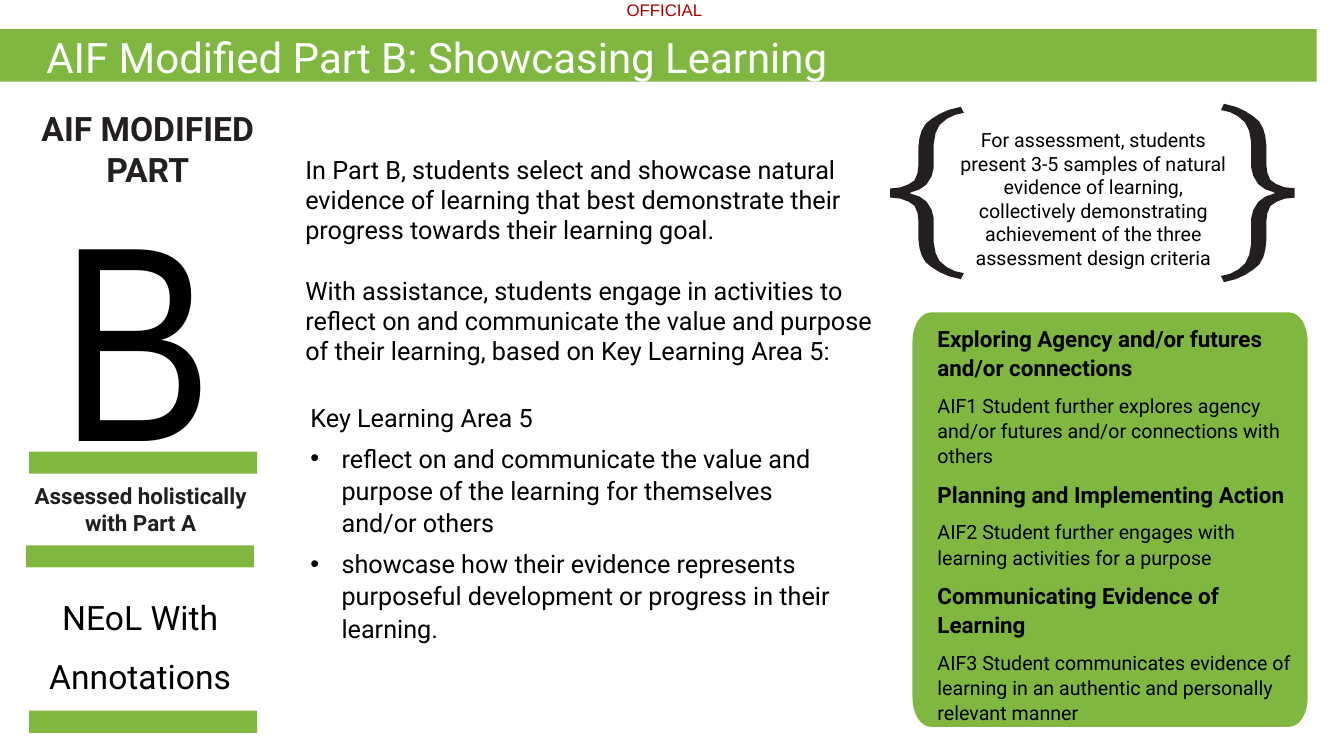
import math
from dataclasses import dataclass

from lxml import etree
from pptx import Presentation
from pptx.dml.color import RGBColor
from pptx.enum.shapes import MSO_SHAPE
from pptx.enum.text import MSO_ANCHOR, PP_ALIGN
from pptx.oxml.ns import qn
from pptx.util import Inches, Pt

RECT = MSO_SHAPE.RECTANGLE
TOP = MSO_ANCHOR.TOP
LEFT, CENTER = PP_ALIGN.LEFT, PP_ALIGN.CENTER


@dataclass(frozen=True)
class Theme:
    font: str = "Roboto"
    label_font: str = "Arial"
    letter_font: str = "Arial Narrow"
    green: str = "80B740"
    ink: str = "231F20"
    black: str = "000000"
    white: str = "FFFFFF"
    red: str = "A80000"
    letter: int = 199
    title: int = 30
    heading: int = 24
    body: int = 18
    subhead: int = 16
    small: int = 14
    label: int = 12


T = Theme()

# Upper half of a left brace, in inches, within a box of BRACE_W by BRACE_H
BRACE_W, BRACE_H = 0.74, 1.71
BRACE_OUTER = [(0.70, 0), (0.58, 0.03), (0.49, 0.07), (0.41, 0.12), (0.35, 0.17),
               (0.31, 0.24), (0.29, 0.31), (0.28, 0.39), (0.28, 0.58), (0.27, 0.66),
               (0.24, 0.73), (0.18, 0.77), (0.10, 0.80), (0, 0.81)]
BRACE_INNER = [(0.20, 0.85), (0.29, 0.82), (0.36, 0.77), (0.41, 0.69), (0.43, 0.61),
               (0.43, 0.37), (0.45, 0.26), (0.49, 0.18), (0.56, 0.12), (0.64, 0.08),
               (0.73, 0.06)]


def paint(sp, color):
    sp.shadow.inherit = False
    sp.fill.solid()
    sp.fill.fore_color.rgb = RGBColor.from_string(color)
    sp.line.fill.background()


def add_bar(s, x, y, w, h):
    sp = s.shapes.add_shape(RECT, Inches(x), Inches(y), Inches(w), Inches(h))
    paint(sp, T.green)
    return sp


def add_outline(s, points, color):
    start, *rest = [(Inches(px), Inches(py)) for px, py in points]
    builder = s.shapes.build_freeform(*start)
    builder.add_line_segments(rest, close=True)
    paint(builder.convert_to_shape(), color)


def set_margins(tf, left=0.1, top=0.05, right=0.1, bottom=0.05):
    tf.margin_left, tf.margin_top = Inches(left), Inches(top)
    tf.margin_right, tf.margin_bottom = Inches(right), Inches(bottom)


def add_box(s, x, y, w, h, **margins):
    tf = s.shapes.add_textbox(Inches(x), Inches(y), Inches(w), Inches(h)).text_frame
    tf.word_wrap = True
    set_margins(tf, **margins)
    return tf


def write(tf, text, size, color=T.black, font=T.font, bold=False, align=LEFT,
          spacing=None, before=0, after=0):
    p = tf.paragraphs[0]
    if p.runs:
        p = tf.add_paragraph()
    p.text = text
    p.font.size, p.font.name, p.font.bold = Pt(size), font, bold
    p.font.color.rgb = RGBColor.from_string(color)
    p.alignment, p.line_spacing = align, spacing
    p.space_before, p.space_after = Pt(before), Pt(after)
    return p


def add_bullet(p, indent):
    pPr = p._p.get_or_add_pPr()
    pPr.set("marL", str(Inches(indent)))
    pPr.set("indent", str(-Inches(indent)))
    for bullet in (etree.Element(qn("a:buFont"), typeface=T.label_font),
                   etree.Element(qn("a:buChar"), char="•")):
        pPr.insert_element_before(bullet, "a:tabLst", "a:defRPr", "a:extLst")


def add_header(s, x, y, w, h):
    tf = add_box(s, 6.19, 0, 0.8, 0.2, left=0, top=0, right=0, bottom=0)
    write(tf, "OFFICIAL", T.label, T.red, T.label_font, align=CENTER)
    tf = add_bar(s, x, y, w, h).text_frame
    tf.vertical_anchor = TOP
    set_margins(tf, left=0.46, top=0.02, right=0, bottom=0)
    write(tf, "AIF Modified Part B: Showcasing Learning", T.title, T.white, before=1.4)


def add_part_column(s, x, y, w):
    tight = dict(left=0.01, top=0.01, right=0, bottom=0)
    tf = add_box(s, x + 0.08, y, 2.24, 0.83, **tight)
    for line in ("AIF MODIFIED", "PART"):
        write(tf, line, T.heading, T.ink, bold=True, align=CENTER, before=0.7)

    tf = add_box(s, x - 0.04, y + 0.51, 2.28, 3.45)
    write(tf, "B", T.letter, font=T.letter_font, align=CENTER)

    # Green rules between the blocks
    for dx, dy in ((0.03, 3.42), (0, 4.35), (0.03, 5.99)):
        add_bar(s, x + dx, y + dy, w, 0.22)

    tf = add_box(s, x - 0.03, y + 3.71, 2.32, 0.55, **tight)
    write(tf, "Assessed holistically with Part A", T.subhead, T.ink, bold=True,
          align=CENTER, before=0.7)

    tf = add_box(s, x, y + 4.62, w, 1.22)
    for line in ("NEoL With", "Annotations"):
        write(tf, line, T.heading, align=CENTER, spacing=Pt(42.5))


def add_description(s, x, y, w):
    tf = add_box(s, x, y, w, 2.22)
    write(tf, "In Part B, students select and showcase natural evidence of learning "
          "that best demonstrate their progress towards their learning goal.", T.body)
    write(tf, "With assistance, students engage in activities to reflect on and "
          "communicate the value and purpose of their learning, based on Key "
          "Learning Area 5:", T.body, before=21.5)

    tf = add_box(s, x + 0.05, y + 2.44, 5.63, 2.52, right=0.2)
    write(tf, "Key Learning Area 5", T.body, spacing=1.07, before=6)
    for text in (
        "reflect on and communicate the value and purpose of the learning for "
        "themselves and/or others",
        "showcase how their evidence represents purposeful development or progress "
        "in their learning.",
    ):
        add_bullet(write(tf, text, T.body, spacing=1.07, before=6), 0.31)


def add_brace(s, x, y, h, opens_left=True):
    def lower(points):
        return [(px, BRACE_H - py) for px, py in reversed(points)]

    outline = BRACE_OUTER + lower(BRACE_OUTER) + lower(BRACE_INNER) + BRACE_INNER
    add_outline(s, [(x + (px if opens_left else BRACE_W - px), y + py * h / BRACE_H)
                    for px, py in outline], T.ink)


def add_assessment_note(s, x, y, w):
    add_brace(s, x, y + 0.03, BRACE_H)
    add_brace(s, x + w - BRACE_W, y, 1.77, opens_left=False)
    tf = add_box(s, x + 0.53, y + 0.19, 2.97, 1.51)
    write(tf, "For assessment, students present 3-5 samples of natural evidence of "
          "learning, collectively demonstrating achievement of the three assessment "
          "design criteria", T.small, align=CENTER)


def add_criteria_panel(s, x, y, w, h):
    # Panel with elliptical corners, clockwise from the right
    rx, ry, steps = 0.18, 0.29, 8
    corners = [(x + w - rx, y + h - ry), (x + rx, y + h - ry),
               (x + rx, y + ry), (x + w - rx, y + ry)]
    points = []
    for quarter, (cx, cy) in enumerate(corners):
        for step in range(steps + 1):
            angle = (quarter + step / steps) * math.pi / 2
            points.append((cx + rx * math.cos(angle), cy + ry * math.sin(angle)))
    add_outline(s, points, T.green)

    tf = add_box(s, x + 0.15, y + 0.06, 3.84, h)
    for heading, text in (
        ("Exploring Agency and/or futures and/or connections",
         "AIF1 Student further explores agency and/or futures and/or connections "
         "with others"),
        ("Planning and Implementing Action",
         "AIF2 Student further engages with learning activities for a purpose"),
        ("Communicating Evidence of Learning",
         "AIF3 Student communicates evidence of learning in an authentic and "
         "personally relevant manner"),
    ):
        write(tf, heading, T.subhead, bold=True, spacing=1.07, after=8)
        write(tf, text, T.small, spacing=1.07, after=8)


def main():
    prs = Presentation()
    prs.slide_width, prs.slide_height = Inches(13.33), Inches(7.5)
    s = prs.slides.add_slide(prs.slide_layouts[6])
    add_header(s, 0, 0.29, 13.06, 0.52)
    add_part_column(s, 0.26, 1.06, 2.26)
    add_description(s, 2.93, 1.48, 5.87)
    add_assessment_note(s, 8.83, 1.03, 4.01)
    add_criteria_panel(s, 9.05, 3.1, 3.92, 4.11)
    prs.save("out.pptx")


if __name__ == "__main__":
    main()
